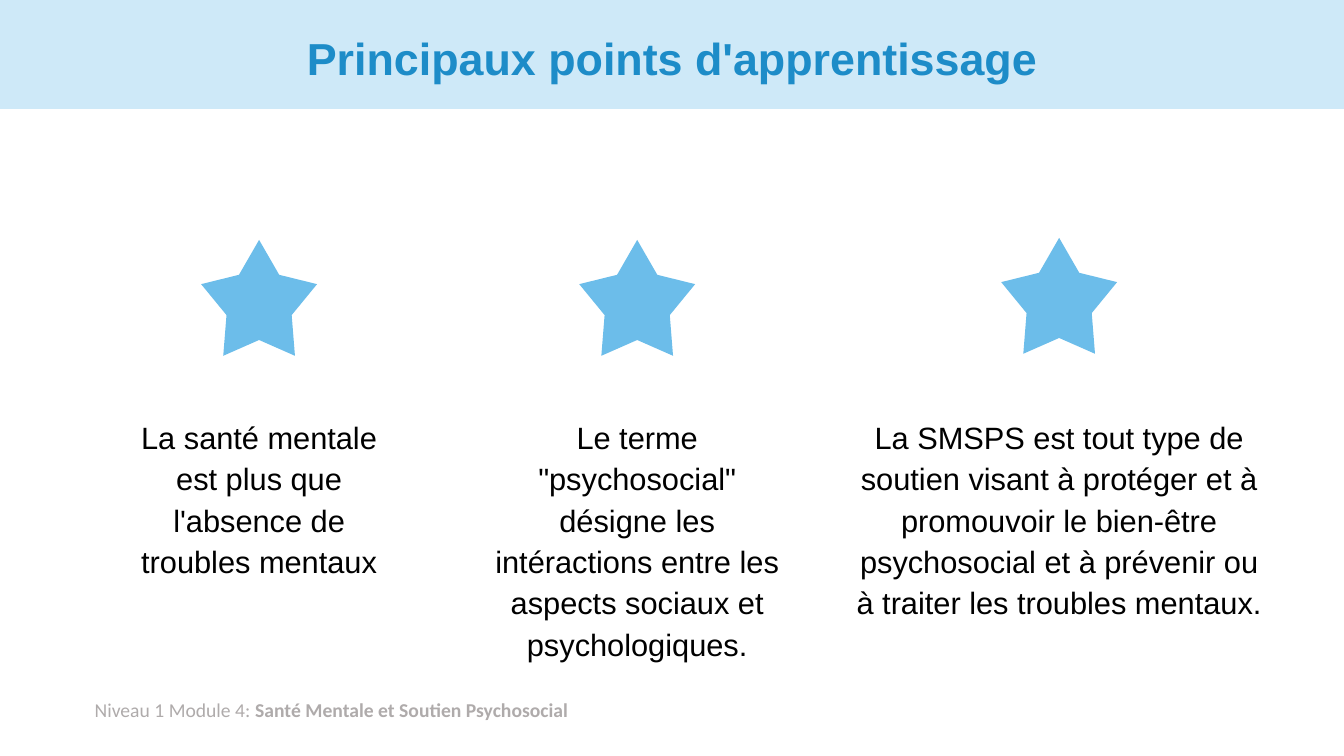
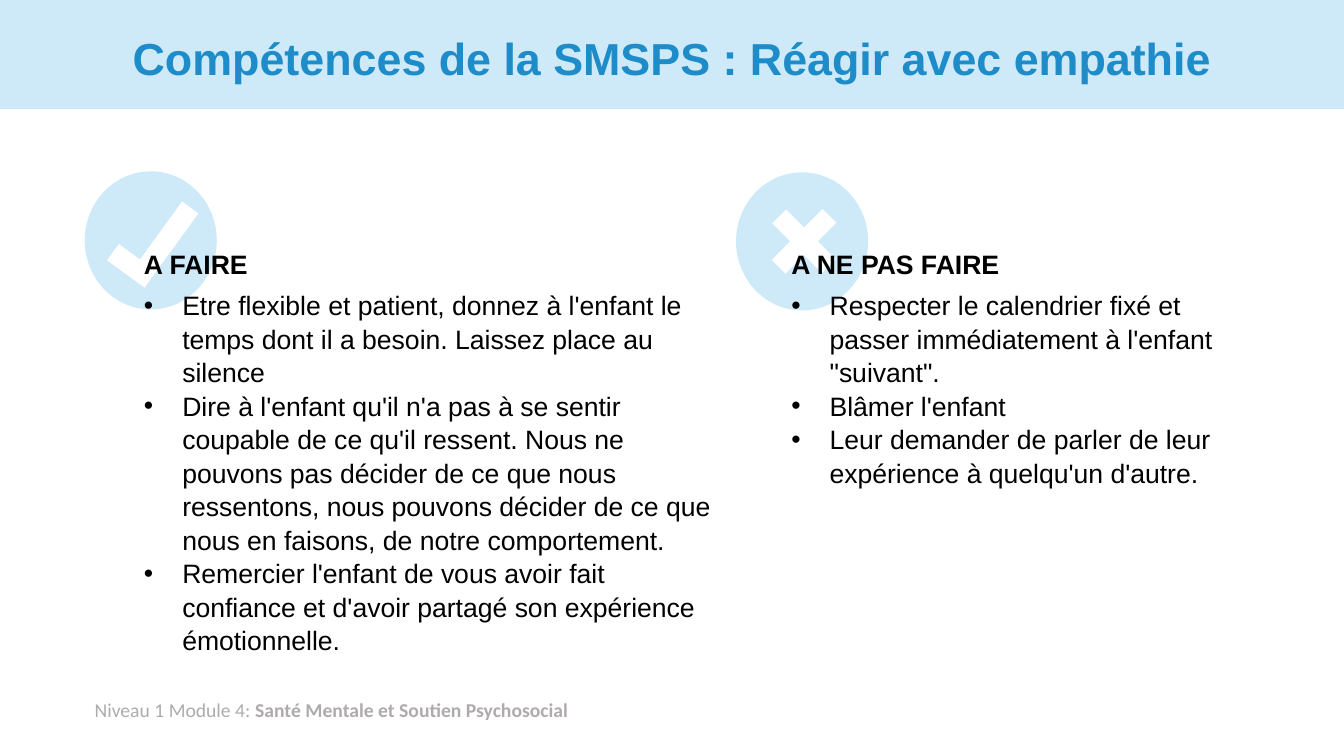
from lxml import etree
from pptx import Presentation
from pptx.dml.color import RGBColor
from pptx.enum.shapes import MSO_SHAPE
from pptx.enum.text import MSO_ANCHOR, MSO_AUTO_SIZE, PP_ALIGN
from pptx.oxml.ns import qn
from pptx.util import Inches, Pt

RECT, STAR, OVAL = MSO_SHAPE.RECTANGLE, MSO_SHAPE.STAR_5_POINT, MSO_SHAPE.OVAL
PLUS = MSO_SHAPE.MATH_PLUS
CENTER, MIDDLE = PP_ALIGN.CENTER, MSO_ANCHOR.MIDDLE
GROW = MSO_AUTO_SIZE.SHAPE_TO_FIT_TEXT

PALE_BLUE = RGBColor(0xCE, 0xE9, 0xF8)
STAR_BLUE = RGBColor(0x6C, 0xBD, 0xEA)
TITLE_BLUE = RGBColor(0x1D, 0x8C, 0xC8)
GREY = RGBColor(0xAF, 0xAB, 0xAB)
BLACK = RGBColor(0, 0, 0)
WHITE = RGBColor(0xFF, 0xFF, 0xFF)

TITLE = {"name": "Arial", "size": Pt(32), "bold": True}
FOOTER = {"name": "Calibri", "size": Pt(14)}
POINT = {"name": "Arial", "size": Pt(22)}
ADVICE = {"name": "Arial", "size": Pt(19)}

SLIDE_W, SLIDE_H = 13.33, 7.5
STAR_SIZE = 1.15
POINT_TOP = 4.06
ADVICE_TOP = 2.39
BULLET_INDENT = Inches(0.38)

FOOTER_TEXT = ("Niveau 1 Module 4: ", "Santé Mentale et Soutien Psychosocial")

POINTS_TITLE = "Principaux points d'apprentissage"
# text, left, width, height, top of the star
POINTS = [
    ("La santé mentale est plus que l'absence de troubles mentaux",
     1.16, 2.82, 1.66, 2.38),
    ("Le terme \"psychosocial\" désigne les intéractions entre les aspects "
     "sociaux et psychologiques.", 4.72, 3.2, 2.45, 2.38),
    ("La SMSPS est tout type de soutien visant à protéger et à promouvoir le "
     "bien-être psychosocial et à prévenir ou à traiter les troubles mentaux.",
     8.38, 4.25, 2.05, 2.36),
]

EMPATHY_TITLE = "Compétences de la SMSPS : Réagir avec empathie"
EMPATHY = [
    {"heading": "A FAIRE",
     "items": [
         "Etre flexible et patient, donnez à l'enfant le temps dont il a besoin. "
         "Laissez place au silence",
         "Dire à l'enfant qu'il n'a pas à se sentir coupable de ce qu'il ressent. "
         "Nous ne pouvons pas décider de ce que nous ressentons, nous pouvons "
         "décider de ce que nous en faisons, de notre comportement.",
         "Remercier l'enfant de vous avoir fait confiance et d'avoir partagé son "
         "expérience émotionnelle."],
     "text": (1.33, 5.93, 4.02),
     "disc": (0.84, 1.7, 1.31, 1.37)},
    {"heading": "A NE PAS FAIRE",
     "items": [
         "Respecter le calendrier fixé et passer immédiatement à l'enfant "
         "\"suivant\".",
         "Blâmer l'enfant",
         "Leur demander de parler de leur expérience à quelqu'un d'autre."],
     "text": (7.75, 4.47, 2.42),
     "disc": (7.3, 1.71, 1.31, 1.37)},
]
TICK_BOX, TICK_THICKNESS, TICK_ROTATION = (1.06, 2.12, 0.91, 0.46), 0.2, 306
CROSS_BOX, CROSS_THICKNESS, CROSS_ROTATION = (7.5, 1.91, 0.95, 0.97), 0.204, 45


def paint(shape, color, rotation=0):
    shape.shadow.inherit = False
    shape.fill.solid()
    shape.fill.fore_color.rgb = color
    shape.line.fill.background()
    shape.rotation = rotation


def add_filled(shapes, kind, box, color, rotation=0, adjustment=None):
    shape = shapes.add_shape(kind, *map(Inches, box))
    paint(shape, color, rotation)
    if adjustment is not None:
        shape.adjustments[0] = adjustment


def add_tick(shapes):
    """Draw an L outline and turn it into a check mark."""
    left, top, width, height = TICK_BOX
    right, bottom = left + width, top + height
    inner_x, inner_y = left + TICK_THICKNESS, bottom - TICK_THICKNESS
    outline = [(inner_x, top), (inner_x, inner_y), (right, inner_y),
               (right, bottom), (left, bottom)]
    builder = shapes.build_freeform(Inches(left), Inches(top))
    builder.add_line_segments([(Inches(x), Inches(y)) for x, y in outline])
    paint(builder.convert_to_shape(), WHITE, TICK_ROTATION)


def add_cross(shapes):
    add_filled(shapes, PLUS, CROSS_BOX, WHITE, CROSS_ROTATION, CROSS_THICKNESS)


def add_text_frame(s, box, **frame_format):
    tf = s.shapes.add_textbox(*map(Inches, box)).text_frame
    tf.word_wrap = True
    for name, value in frame_format.items():
        setattr(tf, name, value)
    return tf


def add_run(p, text, font, color, **extra):
    r = p.add_run()
    r.text = text
    for name, value in {**font, **extra}.items():
        setattr(r.font, name, value)
    r.font.color.rgb = color


def format_paragraph(p, **paragraph_format):
    for name, value in paragraph_format.items():
        setattr(p, name, value)


def add_bullet(p):
    pPr = p._p.get_or_add_pPr()
    pPr.set("marL", str(BULLET_INDENT))
    pPr.set("indent", str(-BULLET_INDENT))
    etree.SubElement(pPr, qn("a:buFont")).set("typeface", "Arial")
    etree.SubElement(pPr, qn("a:buChar")).set("char", "•")


def add_titled_slide(prs, title):
    """Add a slide with the shared band, footer and title."""
    s = prs.slides.add_slide(prs.slide_layouts[6])
    add_filled(s.shapes, RECT, (0, 0, SLIDE_W, 1.08), PALE_BLUE)

    p = add_text_frame(s, (0.84, 6.87, 6.18, 0.34), auto_size=GROW).paragraphs[0]
    module, topic = FOOTER_TEXT
    add_run(p, module, FOOTER, GREY)
    add_run(p, topic, FOOTER, GREY, bold=True)

    tf = add_text_frame(s, (0.92, 0.13, 11.5, 0.95), vertical_anchor=MIDDLE)
    p = tf.paragraphs[0]
    format_paragraph(p, alignment=CENTER, line_spacing=0.9)
    add_run(p, title, TITLE, TITLE_BLUE)
    return s


def build_points(prs):
    s = add_titled_slide(prs, POINTS_TITLE)
    for text, left, width, height, star_top in POINTS:
        star_left = left + (width - STAR_SIZE) / 2
        add_filled(s.shapes, STAR, (star_left, star_top, STAR_SIZE, STAR_SIZE),
                   STAR_BLUE, adjustment=0.281)
        tf = add_text_frame(s, (left, POINT_TOP, width, height), auto_size=GROW)
        p = tf.paragraphs[0]
        format_paragraph(p, alignment=CENTER, line_spacing=1.12, space_after=Pt(8))
        add_run(p, text, POINT, BLACK)


def build_empathy(prs):
    s = add_titled_slide(prs, EMPATHY_TITLE)
    for column, add_mark in zip(EMPATHY, (add_tick, add_cross)):
        icon = s.shapes.add_group_shape()
        add_filled(icon.shapes, OVAL, column["disc"], PALE_BLUE)
        add_mark(icon.shapes)

    for column in EMPATHY:
        left, width, height = column["text"]
        tf = add_text_frame(s, (left, ADVICE_TOP, width, height), auto_size=GROW)
        p = tf.paragraphs[0]
        format_paragraph(p, line_spacing=1.05, space_after=Pt(6))
        add_run(p, column["heading"], ADVICE, BLACK, bold=True)
        for item in column["items"]:
            p = tf.add_paragraph()
            format_paragraph(p, line_spacing=1.05)
            add_bullet(p)
            add_run(p, item, ADVICE, BLACK)


def main():
    prs = Presentation()
    prs.slide_width, prs.slide_height = Inches(SLIDE_W), Inches(SLIDE_H)
    build_points(prs)
    build_empathy(prs)
    prs.save("out.pptx")


if __name__ == "__main__":
    main()
